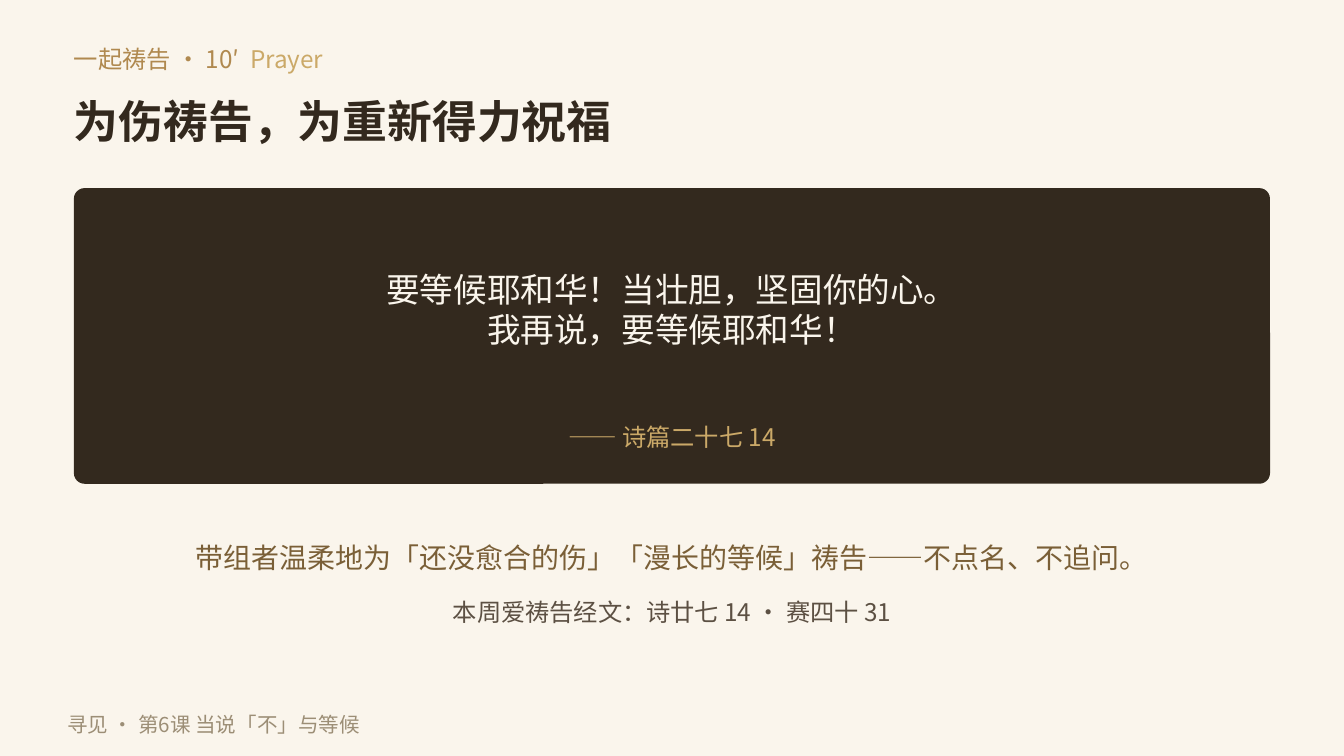
from lxml import etree
from pptx import Presentation
from pptx.dml.color import RGBColor
from pptx.enum.shapes import MSO_SHAPE
from pptx.enum.text import MSO_ANCHOR, MSO_AUTO_SIZE, PP_ALIGN
from pptx.oxml.ns import qn
from pptx.util import Pt

RECT, ROUND = MSO_SHAPE.RECTANGLE, MSO_SHAPE.ROUNDED_RECTANGLE
LEFT, CENTER = PP_ALIGN.LEFT, PP_ALIGN.CENTER
MIDDLE, NO_FIT = MSO_ANCHOR.MIDDLE, MSO_AUTO_SIZE.NONE
PX = 4572
WIDTH, HEIGHT = 2000, 1125
FONT = "Noto Sans CJK SC"
COLORS = {
    "cream": "FAF5EC",
    "dark": "33291E",
    "bronze": "B0894F",
    "gold": "CBA968",
    "brown": "7A5F37",
    "gray": "5C5043",
    "muted": "9C8E76",
}


def add_panel(kind, box, color):
    panel = slide.shapes.add_shape(kind, *[n * PX for n in box])
    panel.shadow.inherit = False
    panel.fill.solid()
    panel.fill.fore_color.rgb = RGBColor.from_string(COLORS[color])
    panel.line.fill.background()
    return panel


def add_text(paragraphs, box, size, align=LEFT, bold=False, holder=None):
    left, top, width, height = [n * PX for n in box]
    holder = holder or slide.shapes.add_textbox(left, top, width, height)
    holder.left, holder.top, holder.width, holder.height = left, top, width, height
    frame = holder.text_frame
    frame.word_wrap = True
    frame.auto_size = NO_FIT
    frame.vertical_anchor = MIDDLE
    frame.margin_left = frame.margin_top = frame.margin_right = frame.margin_bottom = 0
    for i, runs in enumerate(paragraphs):
        paragraph = frame.add_paragraph() if i else frame.paragraphs[0]
        paragraph.alignment = align
        for words, color in runs:
            run = paragraph.add_run()
            run.text = words
            run.font.size = Pt(size)
            run.font.bold = bold
            run.font.name = FONT
            run.font.color.rgb = RGBColor.from_string(COLORS[color])
            etree.SubElement(run.font._element, qn("a:ea"), typeface=FONT)


prs = Presentation()
prs.slide_width, prs.slide_height = WIDTH * PX, HEIGHT * PX
slide = prs.slides.add_slide(prs.slide_layouts[5])

backdrop = add_panel(RECT, (0, 0, WIDTH, HEIGHT), "cream")
slide.shapes._spTree.insert(2, backdrop._element)

add_text([[("一起祷告 · 10′  ", "bronze"), ("Prayer", "gold")]], (110, 56, 1700, 64), 13)
add_text([[("为伤祷告，为重新得力祝福", "dark")]], (110, 140, 1800, 80), 24,
         bold=True, holder=slide.shapes.title)

verse_card = add_panel(ROUND, (110, 280, 1780, 440), "dark")
verse_card.adjustments[0] = 0.036

verse = ["要等候耶和华！当壮胆，坚固你的心。", "我再说，要等候耶和华！"]
add_text([[(line, "cream")] for line in verse], (190, 350, 1620, 220), 18, align=CENTER)

centered_lines = [
    ("—— 诗篇二十七 14", "gold", (190, 620, 1620, 60), 13),
    ("带组者温柔地为「还没愈合的伤」「漫长的等候」祷告——不点名、不追问。",
     "brown", (110, 790, 1780, 80), 15),
    ("本周爱祷告经文：诗廿七 14 · 赛四十 31", "gray", (110, 880, 1780, 60), 13),
]
for words, color, box, size in centered_lines:
    add_text([[(words, color)]], box, size, align=CENTER)

add_text([[("寻见 · 第6课 当说「不」与等候", "muted")]], (100, 1050, 1500, 56), 11)

prs.save("out.pptx")
